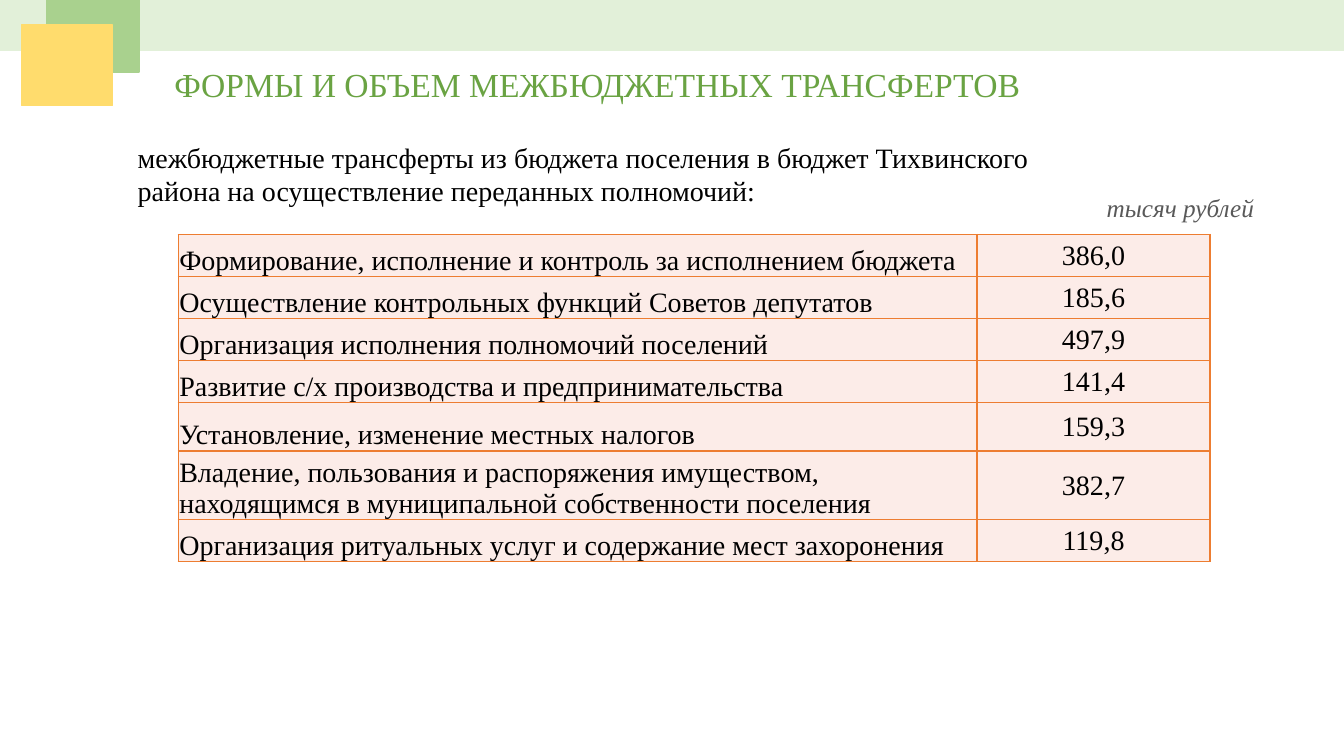
from lxml.etree import SubElement
from pptx import Presentation
from pptx.dml.color import RGBColor
from pptx.enum.shapes import MSO_SHAPE
from pptx.enum.text import MSO_ANCHOR, MSO_AUTO_SIZE, PP_ALIGN
from pptx.oxml.ns import qn
from pptx.util import Pt

TITLE = "ФОРМЫ И ОБЪЕМ МЕЖБЮДЖЕТНЫХ ТРАНСФЕРТОВ"
INTRO = ("межбюджетные трансферты из бюджета поселения в бюджет Тихвинского "
         "района на осуществление переданных полномочий:")
UNIT = "тысяч рублей"
# purpose, sum, row height
GRANTS = [
    ("Формирование, исполнение и контроль за исполнением бюджета", "386,0", 30),
    ("Осуществление контрольных функций Советов депутатов", "185,6", 30),
    ("Организация исполнения полномочий поселений", "497,9", 30),
    ("Развитие с/х производства и предпринимательства", "141,4", 30),
    ("Установление, изменение местных налогов", "159,3", 34.8),
    ("Владение, пользования и распоряжения имуществом, "
     "находящимся в муниципальной собственности поселения", "382,7", 44.6),
    ("Организация ритуальных услуг и содержание мест захоронения", "119,8", 30),
]
COLS = (570.5, 166.5)
THEME = {
    "font": "Times New Roman",
    "title": (24, "6AA343"), "body": (20, "000000"), "unit": (18, "595959"),
    "band": "E2F0D9", "green": "A9D18E", "yellow": "FFDC6D",
    "cell": "FCECE8", "border": "ED7D31",
}
# left, top, width, height, colour
BLOCKS = [
    (0, 0, 960, 36, "band"),
    (33.5, 0, 65.8, 51.4, "green"),
    (15.4, 17.8, 65, 57.6, "yellow"),
]


def style(para, role):
    size, color = THEME[role]
    para.font.name = THEME["font"]
    para.font.size = Pt(size)
    para.font.color.rgb = RGBColor.from_string(color)


def add_text(slide, box, text, role, wrap=True):
    frame = slide.shapes.add_textbox(*map(Pt, box)).text_frame
    frame.word_wrap = wrap
    frame.auto_size = MSO_AUTO_SIZE.SHAPE_TO_FIT_TEXT
    para = frame.paragraphs[0]
    para.text = text
    style(para, role)
    return para


def add_block(slide, left, top, width, height, name):
    block = slide.shapes.add_shape(
        MSO_SHAPE.RECTANGLE, *map(Pt, (left, top, width, height)))
    color = RGBColor.from_string(THEME[name])
    block.shadow.inherit = False
    block.fill.solid()
    block.fill.fore_color.rgb = color
    block.line.color.rgb = color
    block.line.width = Pt(1)


def add_border(cell):
    """Outline all four sides; must run before the cell gets its fill."""
    props = cell._tc.get_or_add_tcPr()
    for side in ("a:lnL", "a:lnR", "a:lnT", "a:lnB"):
        line = SubElement(props, qn(side), w=str(Pt(1)))
        fill = SubElement(line, qn("a:solidFill"))
        SubElement(fill, qn("a:srgbClr"), val=THEME["border"])


def fill_cell(cell, text, anchor, align):
    add_border(cell)
    cell.fill.solid()
    cell.fill.fore_color.rgb = RGBColor.from_string(THEME["cell"])
    cell.margin_left = cell.margin_right = cell.margin_top = Pt(0.7)
    cell.margin_bottom = Pt(0)
    cell.vertical_anchor = anchor
    para = cell.text_frame.paragraphs[0]
    para.text = text
    para.alignment = align
    style(para, "body")


def add_grants(slide, left, top):
    height = sum(row[2] for row in GRANTS)
    table = slide.shapes.add_table(
        len(GRANTS), len(COLS), *map(Pt, (left, top, sum(COLS), height))).table
    table.first_row = table.horz_banding = False
    for col, width in zip(table.columns, COLS):
        col.width = Pt(width)
    for row, (name, value, height) in zip(table.rows, GRANTS):
        row.height = Pt(height)
        fill_cell(row.cells[0], name, MSO_ANCHOR.BOTTOM, PP_ALIGN.LEFT)
        fill_cell(row.cells[1], value, MSO_ANCHOR.MIDDLE, PP_ALIGN.CENTER)


def main():
    deck = Presentation()
    deck.slide_width, deck.slide_height = Pt(960), Pt(540)
    slide = deck.slides.add_slide(deck.slide_layouts[6])
    add_text(slide, (117.4, 41.8, 835, 36), TITLE, "title")
    for block in BLOCKS:
        add_block(slide, *block)
    add_grants(slide, 127.4, 167.4)
    unit = add_text(slide, (783.4, 134, 121, 29), UNIT, "unit", wrap=False)
    unit.font.italic = True
    add_text(slide, (91.2, 96.5, 697.7, 55.4), INTRO, "body")
    deck.save("out.pptx")


if __name__ == "__main__":
    main()
